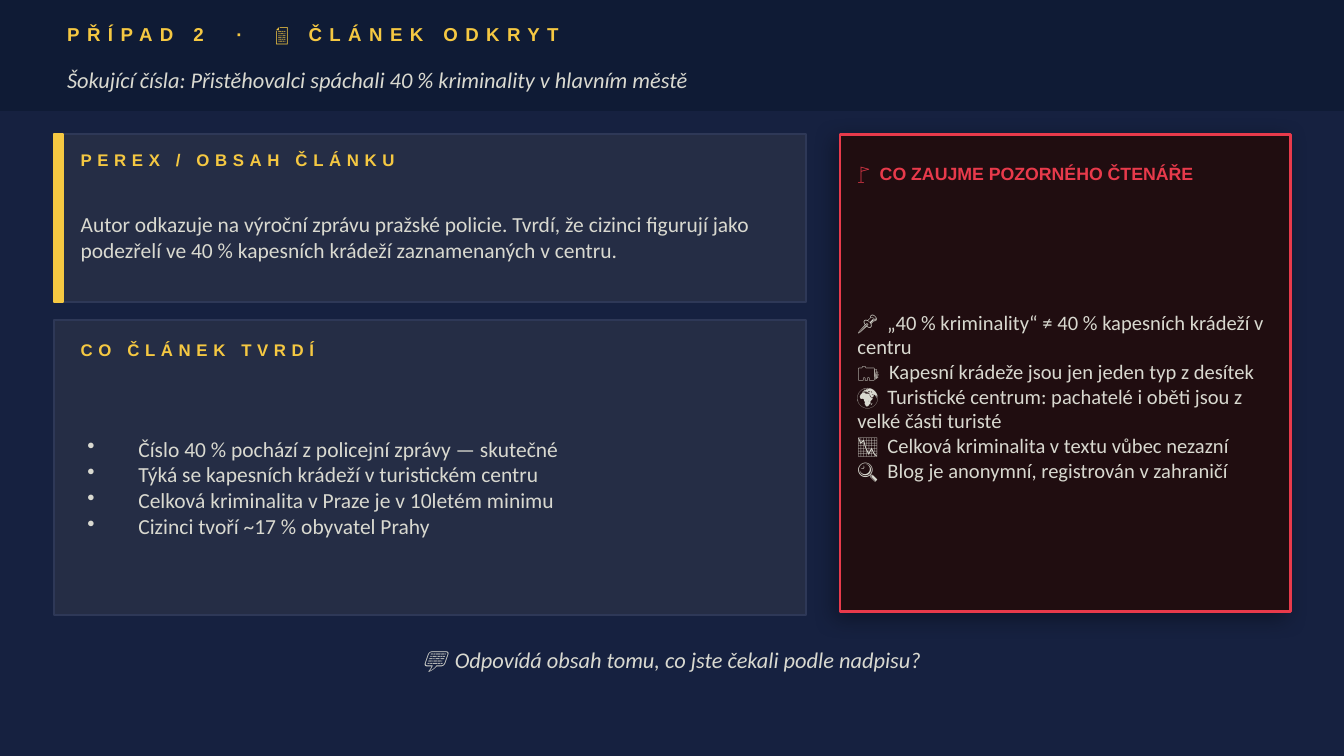
"""Build the slide that reveals the article of case 2."""
from copy import deepcopy
from lxml.etree import SubElement as Sub
from pptx import Presentation
from pptx.dml.color import RGBColor
from pptx.enum.shapes import MSO_SHAPE as Shape
from pptx.enum.text import MSO_ANCHOR as Anchor, MSO_AUTO_SIZE as Auto, PP_ALIGN as Align
from pptx.oxml.ns import qn
from pptx.util import Inches, Pt

NAVY = RGBColor(0x16, 0x21, 0x40)
DARK = RGBColor(0x0F, 0x1B, 0x35)
SLATE = RGBColor(0x25, 0x2D, 0x45)
EDGE = RGBColor(0x2E, 0x38, 0x57)
GOLD = RGBColor(0xF5, 0xC8, 0x42)
CREAM = RGBColor(0xD9, 0xD9, 0xD0)
WINE = RGBColor(0x20, 0x0D, 0x10)
RED = RGBColor(0xE8, 0x3A, 0x4B)

HEAD = {"name": "Arial", "size": Pt(9), "bold": True, "italic": False}
BODY = {"name": "Calibri", "size": Pt(11.5), "bold": False, "italic": False}
NOTE = BODY | {"size": Pt(12), "italic": True}
LEFT, WIDE = 0.6, 5.2

PANELS = [
    ((0, 0, 10, 0.82), DARK, DARK, 1),
    ((0.4, 1, 5.6, 1.25), SLATE, EDGE, 1),
    ((0.4, 1, 0.07, 1.25), GOLD, GOLD, 1),
    ((0.4, 2.38, 5.6, 2.2), SLATE, EDGE, 1),
    ((6.25, 1, 3.35, 3.55), WINE, RED, 1.5),
]
TITLE = "PŘÍPAD 2  ·  📄 ČLÁNEK ODKRYT"
CLAIMS = [
    "Číslo 40 % pochází z policejní zprávy — skutečné",
    "Týká se kapesních krádeží v turistickém centru",
    "Celková kriminalita v Praze je v 10letém minimu",
    "Cizinci tvoří ~17 % obyvatel Prahy",
]
CLUES = [
    "📌  „40 % kriminality“ ≠ 40 % kapesních krádeží v centru",
    "🗂️  Kapesní krádeže jsou jen jeden typ z desítek",
    "🌍  Turistické centrum: pachatelé i oběti jsou z velké části turisté",
    "📉  Celková kriminalita v textu vůbec nezazní",
    "🔍  Blog je anonymní, registrován v zahraničí",
]
TEXTS = [
    ((0.5, 0.42, 9, 0.35), NOTE, CREAM,
     ["Šokující čísla: Přistěhovalci spáchali 40 % kriminality v hlavním městě"], {}),
    ((LEFT, 1.05, WIDE, 0.28), HEAD, GOLD, ["PEREX / OBSAH ČLÁNKU"], {"gap": 3}),
    ((LEFT, 1.35, WIDE, 0.82), BODY, CREAM,
     ["Autor odkazuje na výroční zprávu pražské policie. Tvrdí, že cizinci figurují "
      "jako podezřelí ve 40 % kapesních krádeží zaznamenaných v centru."], {}),
    ((LEFT, 2.45, WIDE, 0.3), HEAD, GOLD, ["CO ČLÁNEK TVRDÍ"], {"gap": 3}),
    ((0.65, 2.8, 5.1, 1.65), BODY, CREAM, CLAIMS, {"dot": True}),
    ((6.38, 1.08, 3.1, 0.42), HEAD | {"size": Pt(9.5)}, RED,
     ["🚩  CO ZAUJME POZORNÉHO ČTENÁŘE"], {}),
    ((6.38, 1.52, 3.1, 2.85), BODY | {"size": Pt(11)}, CREAM, CLUES, {}),
    ((0.5, 4.73, 9, 0.35), NOTE, CREAM,
     ["💬  Odpovídá obsah tomu, co jste čekali podle nadpisu?"], {"align": Align.CENTER}),
]


def add_panel(slide, box, fill, edge, width):
    panel = slide.shapes.add_shape(Shape.RECTANGLE, *map(Inches, box))
    panel.shadow.inherit = False
    panel.fill.solid()
    panel.fill.fore_color.rgb = fill
    panel.line.color.rgb = edge
    panel.line.width = Pt(width)
    return panel


def add_shadow(panel):
    glow = panel._element.spPr.find(qn("a:effectLst"))
    cast = Sub(glow, qn("a:outerShdw"), blurRad=str(Pt(12)), dist=str(Pt(4)),
               dir=str(135 * 60000), algn="bl", rotWithShape="0")
    tint = Sub(cast, qn("a:srgbClr"), val="000000")
    Sub(tint, qn("a:alpha"), val="35000")


def add_dot(para):
    props = para._p.get_or_add_pPr()
    props.set("marL", str(Inches(0.38)))
    props.set("indent", str(Inches(-0.38)))
    Sub(props, qn("a:buSzPct"), val="100000")
    Sub(props, qn("a:buChar"), char="•")


def add_run(para, line, font, color, gap):
    run = para.add_run()
    run.text = line
    for key, value in font.items():
        setattr(run.font, key, value)
    run.font.color.rgb = color
    if gap:
        run.font._element.set("spc", str(gap * 100))
    return run


def add_break(para, run):
    para.add_line_break()
    para._p[-1].append(deepcopy(run.font._element))


def fill_text(shape, box, font, color, lines, gap=0, dot=False, align=Align.LEFT):
    shape.left, shape.top, shape.width, shape.height = map(Inches, box)
    frame = shape.text_frame
    form = {"word_wrap": True, "auto_size": Auto.NONE, "vertical_anchor": Anchor.MIDDLE,
            "margin_left": 0, "margin_top": 0, "margin_right": 0, "margin_bottom": 0}
    for key, value in form.items():
        setattr(frame, key, value)
    para, run = frame.paragraphs[0], None
    for line in lines:
        if run and dot:
            para = frame.add_paragraph()
        elif run:
            add_break(para, run)
        para.alignment = align
        if dot:
            add_dot(para)
        run = add_run(para, line, font, color, gap)


def main():
    deck = Presentation()
    deck.slide_width = Inches(10)
    deck.slide_height = deck.slide_width * 9 // 16
    slide = deck.slides.add_slide(deck.slide_layouts[5])
    slide.background.fill.solid()
    slide.background.fill.fore_color.rgb = NAVY
    panels = [add_panel(slide, *panel) for panel in PANELS]
    add_shadow(panels[-1])
    title = slide.shapes.title
    slide.shapes._spTree.append(title._element)
    fill_text(title, (0.5, 0.08, 9, 0.35), HEAD | {"size": Pt(10)}, GOLD, [TITLE], gap=4)
    for box, font, color, lines, extra in TEXTS:
        label = slide.shapes.add_textbox(*map(Inches, box))
        fill_text(label, box, font, color, lines, **extra)
    deck.save("out.pptx")


if __name__ == "__main__":
    main()
